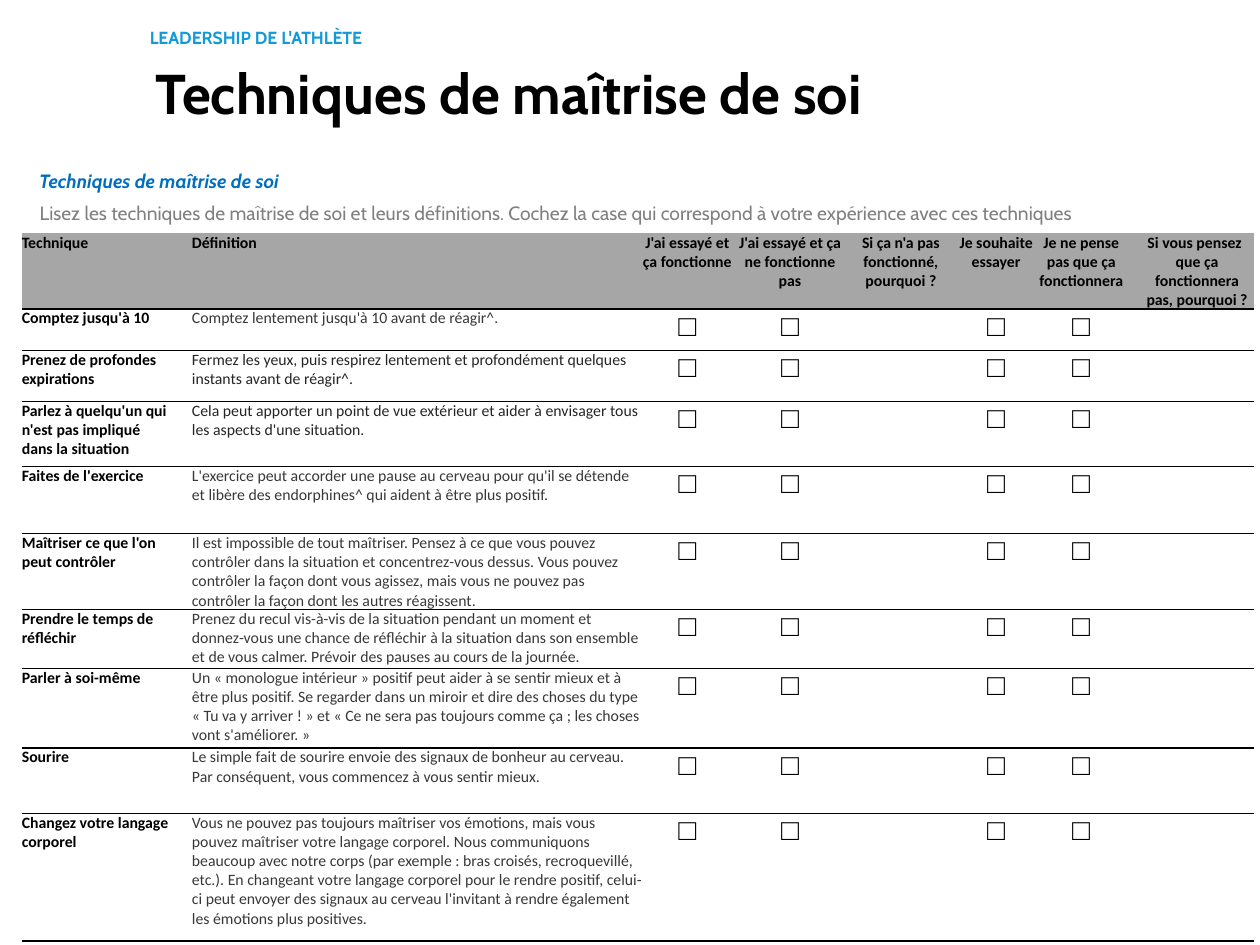
from dataclasses import dataclass

from lxml import etree
from pptx import Presentation
from pptx import util as u
from pptx.dml.color import RGBColor
from pptx.enum import text
from pptx.oxml import ns


@dataclass(frozen=True)
class Theme:
    heading_font: str = "Cabin"
    body_font: str = "Calibri"
    box_font: str = "Arial"
    black: str = "000000"
    cyan: str = "109AD7"
    blue: str = "006EBF"
    grey: str = "808080"
    header_fill: str = "A6A6A6"
    dark: str = "383838"
    darker: str = "252525"
    kicker_size: float = 10
    title_size: float = 32
    intro_size: float = 11
    table_size: float = 9
    box_size: float = 17
    rule_width: float = 1


THEME = Theme()

# Headings: text, (left, top, width, height) in cm, side inset, size, colour, bold, italic
HEADINGS = [
    ("LEADERSHIP DE L'ATHLÈTE", (2.77, 0.41, 5.23, 0.69), 0.25,
     THEME.kicker_size, THEME.cyan, True, False),
    ("Techniques de maîtrise de soi", (2.88, 1.05, 16.2, 1.63), 0.25,
     THEME.title_size, THEME.black, True, False),
    ("Techniques de maîtrise de soi", (0.79, 3.28, 5.33, 0.74), 0,
     THEME.intro_size, THEME.blue, True, True),
    ("Lisez les techniques de maîtrise de soi et leurs définitions. Cochez la case qui "
     "correspond à votre expérience avec ces techniques", (0.8, 3.94, 22.63, 0.74), 0,
     THEME.intro_size, THEME.grey, False, False),
]

# Columns: header, width in cm, whether the rows hold a check box
COLUMNS = [
    ("Technique", 3.43, False),
    ("Définition", 9.07, False),
    ("J'ai essayé et ça fonctionne", 1.83, True),
    ("J'ai essayé et ça ne fonctionne pas", 2.31, True),
    ("Si ça n'a pas fonctionné, pourquoi ?", 2.16, False),
    ("Je souhaite essayer", 1.68, True),
    ("Je ne pense pas que ça fonctionnera", 1.75, True),
    ("Si vous pensez que ça fonctionnera\npas, pourquoi ?", 2.6, False),
]

# Rows: technique, definition, height in cm, definition colour
TECHNIQUES = [
    ("Comptez jusqu'à 10",
     "Comptez lentement jusqu'à 10 avant de réagir^.", 0.84, THEME.dark),
    ("Prenez de profondes expirations",
     "Fermez les yeux, puis respirez lentement et profondément quelques instants avant "
     "de réagir^.", 1.02, THEME.darker),
    ("Parlez à quelqu'un qui n'est pas impliqué\ndans la situation",
     "Cela peut apporter un point de vue extérieur et aider à envisager tous les aspects "
     "d'une situation.", 1.32, THEME.darker),
    ("Faites de l'exercice",
     "L'exercice peut accorder une pause au cerveau pour qu'il se détende et libère des "
     "endorphines^ qui aident à être plus positif.", 1.35, THEME.dark),
    ("Maîtriser ce que l'on\npeut contrôler",
     "Il est impossible de tout maîtriser. Pensez à ce que vous pouvez contrôler dans la "
     "situation et concentrez-vous dessus. Vous pouvez contrôler la façon dont vous "
     "agissez, mais vous ne pouvez pas contrôler la façon dont les autres réagissent.",
     1.3, THEME.dark),
    ("Prendre le temps de réfléchir",
     "Prenez du recul vis-à-vis de la situation pendant un moment et donnez-vous une "
     "chance de réfléchir à la situation dans son ensemble et de vous calmer. Prévoir des "
     "pauses au cours de la journée.", 1.19, THEME.dark),
    ("Parler à soi-même",
     "Un « monologue intérieur » positif peut aider à se sentir mieux et à être plus "
     "positif. Se regarder dans un miroir et dire des choses du type « Tu va y arriver ! » "
     "et « Ce ne sera pas toujours comme ça ; les choses vont s'améliorer. »",
     1.6, THEME.dark),
    ("Sourire",
     "Le simple fait de sourire envoie des signaux de bonheur au cerveau. Par conséquent, "
     "vous commencez à vous sentir mieux.", 1.32, THEME.dark),
    ("Changez votre langage corporel",
     "Vous ne pouvez pas toujours maîtriser vos émotions, mais vous pouvez maîtriser votre "
     "langage corporel. Nous communiquons beaucoup avec notre corps (par exemple : bras "
     "croisés, recroquevillé, etc.). En changeant votre langage corporel pour le rendre "
     "positif, celui-ci peut envoyer des signaux au cerveau l'invitant à rendre également "
     "les émotions plus positives.", 2.57, THEME.dark),
]
HEADER_HEIGHT = 1.52
TABLE_LEFT, TABLE_TOP = 0.44, 4.7
CHECK_BOX = "□"
PLAIN_TABLE_STYLE = "{2D5ABB26-0587-4C30-8999-92F81FD0307C}"


def write(para, words, font, size, color, bold=False, italic=False):
    para.text = words
    for span in para.runs:
        span.font.name = font
        span.font.size = u.Pt(size)
        span.font.color.rgb = RGBColor.from_string(color)
        span.font.bold = bold
        span.font.italic = italic


def add_heading(page, words, place, inset, size, color, bold, italic):
    box = page.shapes.add_textbox(*(u.Cm(length) for length in place))
    frame = box.text_frame
    frame.word_wrap = False
    frame.auto_size = text.MSO_AUTO_SIZE.SHAPE_TO_FIT_TEXT
    frame.margin_left = frame.margin_right = u.Cm(inset)
    write(frame.paragraphs[0], words, THEME.heading_font, size, color, bold, italic)


def rule_below(cell):
    properties = cell._tc.get_or_add_tcPr()
    line = etree.Element(ns.qn("a:lnB"), w=str(u.Pt(THEME.rule_width)))
    fill = etree.SubElement(line, ns.qn("a:solidFill"))
    etree.SubElement(fill, ns.qn("a:srgbClr"), val=THEME.black)
    properties.insert(0, line)


def format_cell(cell, fill=None):
    cell.margin_left = cell.margin_right = cell.margin_top = cell.margin_bottom = 0
    if fill:
        cell.fill.solid()
        cell.fill.fore_color.rgb = RGBColor.from_string(fill)
    else:
        cell.fill.background()
    rule_below(cell)


def add_table(page):
    heights = [HEADER_HEIGHT] + [height for _, _, height, _ in TECHNIQUES]
    widths = [width for _, width, _ in COLUMNS]
    frame = page.shapes.add_table(len(heights), len(widths), u.Cm(TABLE_LEFT),
                                  u.Cm(TABLE_TOP), u.Cm(sum(widths)), u.Cm(sum(heights)))
    table = frame.table
    table.first_row = table.horz_banding = False
    table._tbl.tblPr.find(ns.qn("a:tableStyleId")).text = PLAIN_TABLE_STYLE
    for row, height in zip(table.rows, heights):
        row.height = u.Cm(height)

    for index, (header, width, has_box) in enumerate(COLUMNS):
        table.columns[index].width = u.Cm(width)

        # Header cell
        cell = table.cell(0, index)
        format_cell(cell, THEME.header_fill)
        para = cell.text_frame.paragraphs[0]
        write(para, header, THEME.body_font, THEME.table_size, THEME.black, bold=True)
        if index > 1:
            para.alignment = text.PP_ALIGN.CENTER

        # Technique, definition or check box
        for number, (technique, definition, _, color) in enumerate(TECHNIQUES, 1):
            cell = table.cell(number, index)
            format_cell(cell)
            para = cell.text_frame.paragraphs[0]
            if index == 0:
                write(para, technique, THEME.body_font, THEME.table_size, THEME.black, bold=True)
            elif index == 1:
                write(para, definition, THEME.body_font, THEME.table_size, color)
            elif has_box:
                write(para, CHECK_BOX, THEME.box_font, THEME.box_size, THEME.black)
                para.alignment = text.PP_ALIGN.CENTER

    # Hanging indent of the last header
    indent = table.cell(0, len(COLUMNS) - 1).text_frame.paragraphs[0]._p.get_or_add_pPr()
    indent.set("marL", str(u.Cm(0.32)))
    indent.set("indent", str(u.Cm(-0.1)))


def main():
    deck = Presentation()
    deck.slide_width, deck.slide_height = u.Cm(25.4), u.Cm(19.05)
    page = deck.slides.add_slide(deck.slide_layouts[6])
    *top_headings, instruction = HEADINGS
    for heading in top_headings:
        add_heading(page, *heading)
    add_table(page)
    add_heading(page, *instruction)
    deck.save("out.pptx")


if __name__ == "__main__":
    main()
